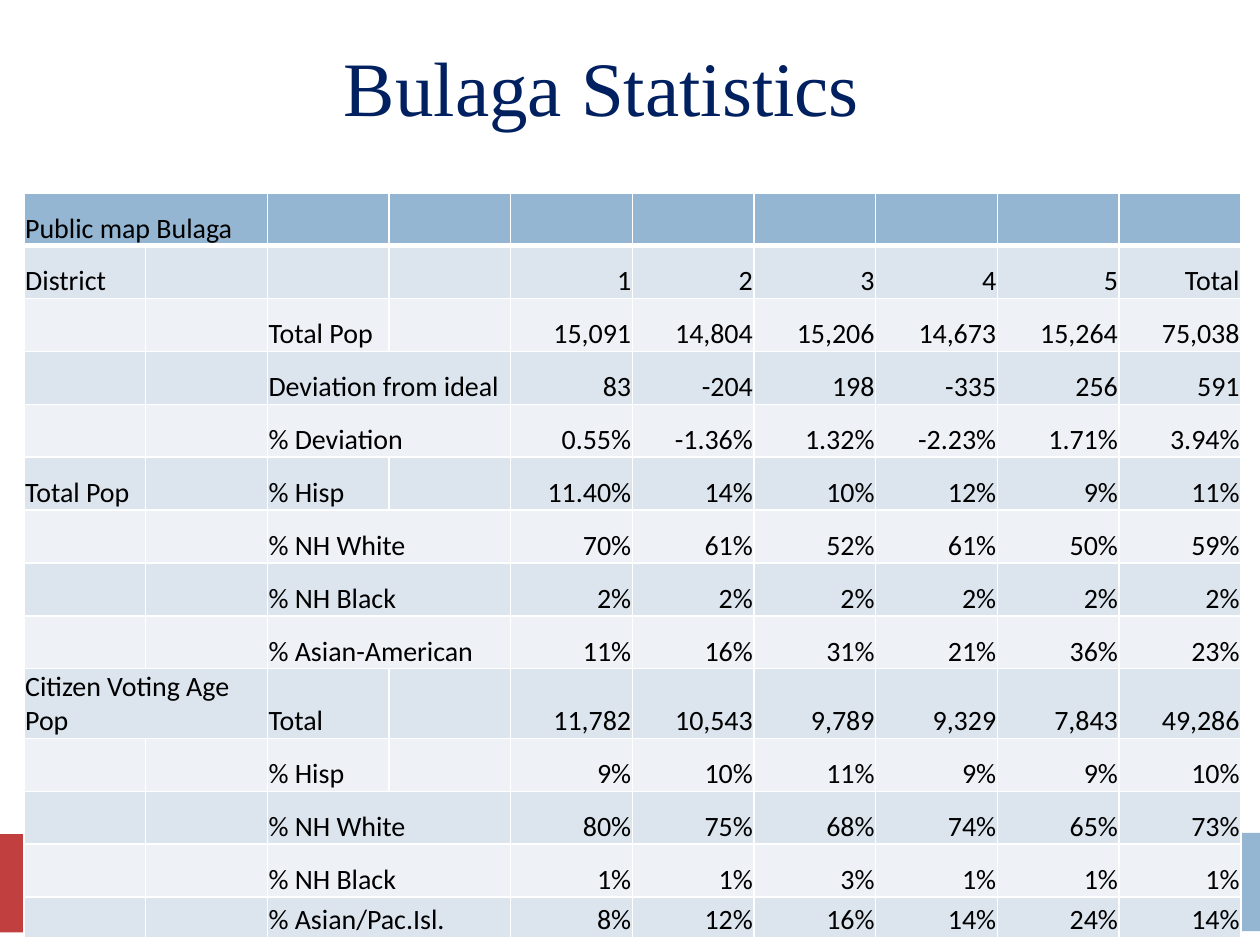
"""Build the Bulaga Statistics slide: a title, two footer bars and a district table."""
from dataclasses import dataclass

from lxml import etree
from pptx import Presentation
from pptx import util as u
from pptx.dml.color import RGBColor
from pptx.enum import shapes, text
from pptx.oxml.ns import qn


@dataclass(frozen=True)
class Theme:
    title: str = "002060"
    ink: str = "000000"
    red: str = "C13F3F"
    blue: str = "94B6D2"
    bands: tuple = ("EEF2F7", "DCE5EE")
    border: str = "FFFFFF"
    title_font: str = "Times New Roman"
    body_font: str = "Calibri"
    title_size: int = 44
    body_size: int = 16


THEME = Theme()
TITLE = "Bulaga Statistics"
ROWS = [
    ("Public map Bulaga", "", ""),
    ("District", "", "1 2 3 4 5 Total"),
    ("", "Total Pop", "15,091 14,804 15,206 14,673 15,264 75,038"),
    ("", "Deviation from ideal", "83 -204 198 -335 256 591"),
    ("", "% Deviation", "0.55% -1.36% 1.32% -2.23% 1.71% 3.94%"),
    ("Total Pop", "% Hisp", "11.40% 14% 10% 12% 9% 11%"),
    ("", "% NH White", "70% 61% 52% 61% 50% 59%"),
    ("", "% NH Black", "2% 2% 2% 2% 2% 2%"),
    ("", "% Asian-American", "11% 16% 31% 21% 36% 23%"),
    ("Citizen Voting Age Pop", "Total", "11,782 10,543 9,789 9,329 7,843 49,286"),
    ("", "% Hisp", "9% 10% 11% 9% 9% 10%"),
    ("", "% NH White", "80% 75% 68% 74% 65% 73%"),
    ("", "% NH Black", "1% 1% 3% 1% 1% 1%"),
    ("", "% Asian/Pac.Isl.", "8% 12% 16% 14% 24% 14%"),
]
BARS = [(-0.01, 6.62, 2.46, 0.78, THEME.red), (2.58, 6.61, 7.42, 0.78, THEME.blue)]
TITLE_BOX = (2.63, 0.11, 7.04, 0.99)
TABLE_LEFT, TABLE_TOP, TABLE_WIDTH = 0.19, 1.53, 9.66
COLUMNS, FIRST_VALUE = 10, 4
ROW_HEIGHT, LAST_ROW_HEIGHT = 0.42, 0.32
ONE_COLUMN_CHARS = 9


def style_font(font, name, size, color):
    """Apply a typeface, size and colour."""
    font.name, font.size = name, u.Pt(size)
    font.color.rgb = RGBColor.from_string(color)


def add_bar(slide, left, top, width, height, color):
    """Add one plain footer bar."""
    sp = slide.shapes.add_shape(shapes.MSO_SHAPE.RECTANGLE,
                                *map(u.Inches, (left, top, width, height)))
    sp.shadow.inherit = False
    sp.fill.solid()
    sp.fill.fore_color.rgb = RGBColor.from_string(color)
    sp.line.fill.background()


def set_borders(cell, widths):
    """Draw the cell's borders, given points for each side."""
    props = cell._tc.get_or_add_tcPr()
    for side, width in widths.items():
        line = etree.SubElement(props, qn(f"a:ln{side}"), w=str(u.Pt(width)))
        fill = etree.SubElement(line, qn("a:solidFill"))
        etree.SubElement(fill, qn("a:srgbClr"), val=THEME.border)


def style_cell(cell, row, column, content):
    """Fill in and format one table cell."""
    set_borders(cell, {"L": 1, "R": 1, "T": 3 if row == 1 else 1, "B": 3 if row == 0 else 1})
    cell.fill.solid()
    color = THEME.bands[row % 2] if row else THEME.blue
    cell.fill.fore_color.rgb = RGBColor.from_string(color)
    cell.margin_left = cell.margin_right = cell.margin_top = u.Inches(0.01)
    cell.margin_bottom = 0
    cell.vertical_anchor = text.MSO_ANCHOR.BOTTOM
    cell.text_frame.text = content
    p = cell.text_frame.paragraphs[0]
    p.alignment = text.PP_ALIGN.RIGHT if column >= FIRST_VALUE else text.PP_ALIGN.LEFT
    style_font(p.font, THEME.body_font, THEME.body_size, THEME.ink)
    for r in p.runs:
        style_font(r.font, THEME.body_font, THEME.body_size, THEME.ink)


def add_statistics(slide):
    """Add the table, merging label cells that need two columns."""
    height = ROW_HEIGHT * (len(ROWS) - 1) + LAST_ROW_HEIGHT
    frame = slide.shapes.add_table(len(ROWS), COLUMNS, *map(
        u.Inches, (TABLE_LEFT, TABLE_TOP, TABLE_WIDTH, height)))
    table = frame.table
    table.first_row = table.horz_banding = False
    for column in table.columns:
        column.width = u.Inches(TABLE_WIDTH / COLUMNS)
    for row in table.rows:
        row.height = u.Inches(ROW_HEIGHT)
    table.rows[len(ROWS) - 1].height = u.Inches(LAST_ROW_HEIGHT)
    for i, (group, measure, values) in enumerate(ROWS):
        contents = {0: group, 2: measure, **dict(enumerate(values.split(), FIRST_VALUE))}
        for j in range(COLUMNS):
            style_cell(table.cell(i, j), i, j, contents.get(j, ""))
        for j in (0, 2):
            if len(contents[j]) > ONE_COLUMN_CHARS:
                table.cell(i, j).merge(table.cell(i, j + 1))


def main():
    """Assemble and save the slide."""
    prs = Presentation()
    prs.slide_width, prs.slide_height = u.Inches(10), u.Inches(7.5)
    s = prs.slides.add_slide(prs.slide_layouts[5])
    for bar in BARS:
        add_bar(s, *bar)
    title = s.shapes.title
    title.left, title.top, title.width, title.height = map(u.Inches, TITLE_BOX)
    tf = title.text_frame
    tf.text = TITLE
    tf.vertical_anchor = text.MSO_ANCHOR.BOTTOM
    p = tf.paragraphs[0]
    p.alignment = text.PP_ALIGN.LEFT
    style_font(p.runs[0].font, THEME.title_font, THEME.title_size, THEME.title)
    add_statistics(s)
    prs.save("out.pptx")


if __name__ == "__main__":
    main()
